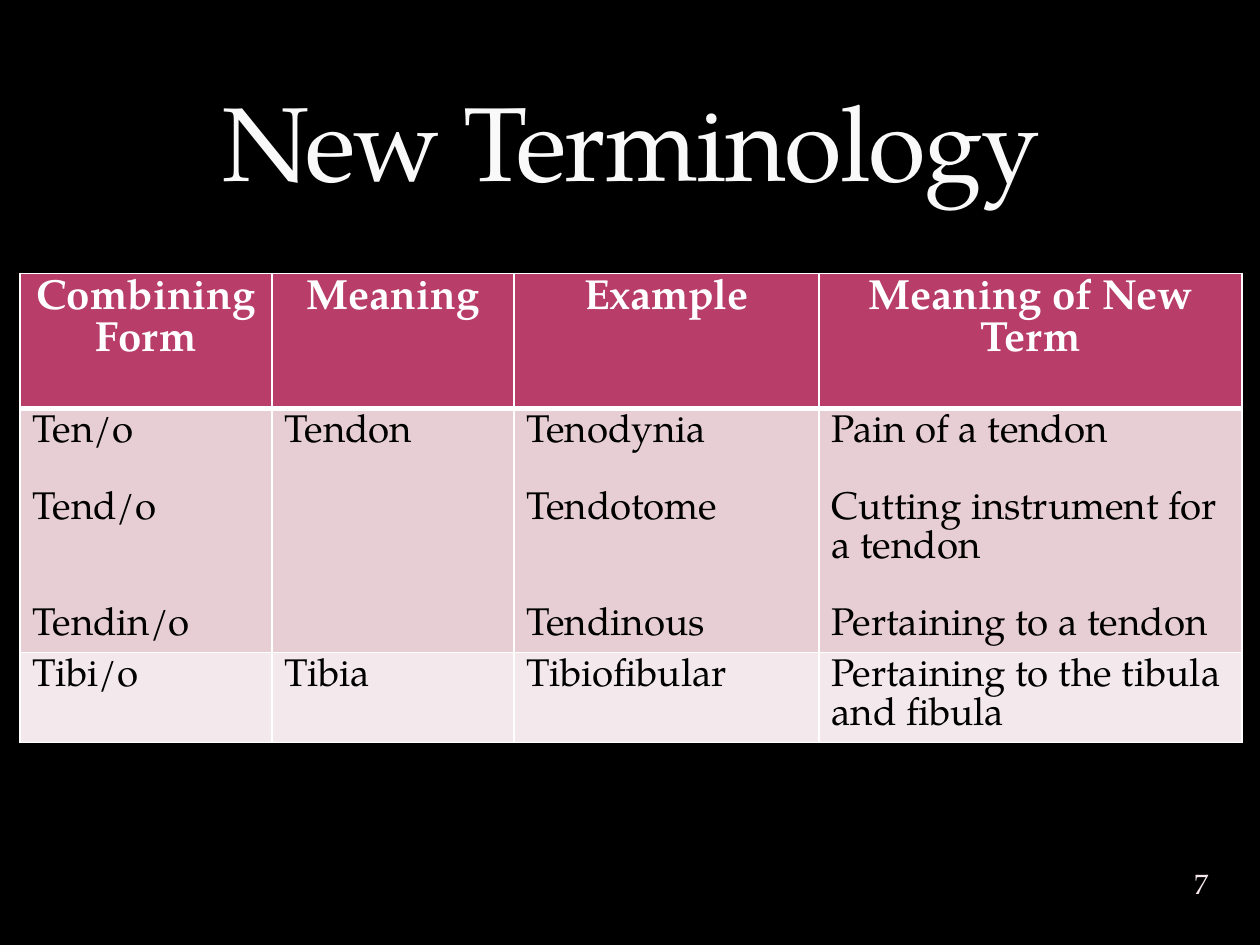
from lxml import etree
from pptx import Presentation
from pptx.dml.color import RGBColor
from pptx.enum.text import MSO_ANCHOR, MSO_AUTO_SIZE, PP_ALIGN
from pptx.oxml import parse_xml
from pptx.oxml.ns import nsdecls, qn
from pptx.util import Inches, Pt

CENTER, LEFT = PP_ALIGN.CENTER, PP_ALIGN.LEFT
BOTTOM, MIDDLE = MSO_ANCHOR.BOTTOM, MSO_ANCHOR.MIDDLE
NO_AUTOFIT = MSO_AUTO_SIZE.NONE

FONT = "TeX Gyre Pagella"
BLACK = RGBColor(0x00, 0x00, 0x00)
WHITE = RGBColor(0xFF, 0xFF, 0xFF)
TITLE_WHITE = RGBColor(0xF9, 0xF9, 0xF9)
TITLE_OUTLINE = RGBColor(0x9C, 0x38, 0x88)
NUMBER_PINK = RGBColor(0xF4, 0xE7, 0xED)
HEADER_ROSE = RGBColor(0xB8, 0x3D, 0x68)
BAND_DARK = RGBColor(0xE6, 0xCE, 0xD4)
BAND_LIGHT = RGBColor(0xF3, 0xE8, 0xEB)

HEADER_SIZE, BODY_SIZE = 24, 22
COLUMN_WIDTHS = (2, 1.92, 2.42, 3.36)
ROW_HEIGHTS = (1.07, 1.94, 0.71)
ROW_FILLS = (HEADER_ROSE, BAND_DARK, BAND_LIGHT)

# Each cell lists its paragraphs as (text, lines of space before).
TERMS = (
    ([("Combining Form", 0)], [("Meaning", 0)],
     [("Example", 0)], [("Meaning of New Term", 0)]),
    ([("Ten/o", 0), ("Tend/o", 1), ("Tendin/o", 2)],
     [("Tendon", 0)],
     [("Tenodynia", 0), ("Tendotome", 1), ("Tendinous", 2)],
     [("Pain of a tendon", 0), ("Cutting instrument for a tendon", 1),
      ("Pertaining to a tendon", 1)]),
    ([("Tibi/o", 0)], [("Tibia", 0)], [("Tibiofibular", 0)],
     [("Pertaining to the tibula and fibula", 0)]),
)


def write(paragraph, text, size, color, align, bold=False):
    paragraph.text = text
    paragraph.alignment = align
    font = paragraph.runs[0].font
    font.name, font.size, font.bold = FONT, Pt(size), bold
    font.color.rgb = color


def add_title(slide, left, top, width, height):
    title = slide.shapes.title
    title.left, title.top, title.width, title.height = map(
        Inches, (left, top, width, height))
    frame = title.text_frame
    frame.word_wrap = True
    frame.auto_size = NO_AUTOFIT
    frame.vertical_anchor = BOTTOM
    heading = frame.paragraphs[0]
    write(heading, "New Terminology", 60, TITLE_WHITE, CENTER)
    properties = heading.runs[0].font._element
    properties.set("spc", "-100")
    properties.insert(0, parse_xml(
        f'<a:ln {nsdecls("a")} w="{Pt(0.25)}"><a:solidFill>'
        f'<a:srgbClr val="{TITLE_OUTLINE}"><a:alpha val="25000"/></a:srgbClr>'
        '</a:solidFill><a:prstDash val="solid"/></a:ln>'))


def set_borders(cell, top, bottom):
    """Draw white cell borders, with top and bottom widths in points."""
    properties = cell._tc.get_or_add_tcPr()
    for side, width in (("L", 1), ("R", 1), ("T", top), ("B", bottom)):
        line = etree.SubElement(properties, qn(f"a:ln{side}"), w=str(Pt(width)))
        fill = etree.SubElement(line, qn("a:solidFill"))
        etree.SubElement(fill, qn("a:srgbClr"), val=str(WHITE))


def fill_cell(cell, entries, row):
    header = row == 0
    set_borders(cell, top=3 if row == 1 else 1, bottom=3 if header else 1)
    cell.fill.solid()
    cell.fill.fore_color.rgb = ROW_FILLS[row]
    frame = cell.text_frame
    for index, (text, gap) in enumerate(entries):
        paragraph = frame.add_paragraph() if index else frame.paragraphs[0]
        if header:
            write(paragraph, text, HEADER_SIZE, WHITE, CENTER, bold=True)
        else:
            write(paragraph, text, BODY_SIZE, BLACK, LEFT)
        if gap:
            paragraph.space_before = Pt(gap * BODY_SIZE)


def add_terms_table(slide, left, top):
    table = slide.shapes.add_table(
        len(TERMS), len(COLUMN_WIDTHS), Inches(left), Inches(top),
        Inches(sum(COLUMN_WIDTHS)), Inches(sum(ROW_HEIGHTS))).table
    table.horz_banding = False
    for column, width in zip(table.columns, COLUMN_WIDTHS):
        column.width = Inches(width)
    for row, height in zip(table.rows, ROW_HEIGHTS):
        row.height = Inches(height)
    for row, cells in enumerate(TERMS):
        for column, entries in enumerate(cells):
            fill_cell(table.cell(row, column), entries, row)


def add_page_number(slide, left, top, width, height):
    frame = slide.shapes.add_textbox(
        *map(Inches, (left, top, width, height))).text_frame
    frame.margin_left = frame.margin_right = 0
    frame.margin_top = frame.margin_bottom = 0
    frame.word_wrap = True
    frame.vertical_anchor = MIDDLE
    write(frame.paragraphs[0], "7", 16, NUMBER_PINK, CENTER)


def main():
    deck = Presentation()
    deck.slide_width, deck.slide_height = Inches(10), Inches(7.5)
    slide = deck.slides.add_slide(deck.slide_layouts.get_by_name("Title Only"))
    slide.background.fill.solid()
    slide.background.fill.fore_color.rgb = BLACK
    add_title(slide, 0.51, 0.33, 9, 1.33)
    add_terms_table(slide, 0.16, 2.17)
    add_page_number(slide, 9.2, 6.76, 0.67, 0.5)
    deck.save("out.pptx")


if __name__ == "__main__":
    main()
